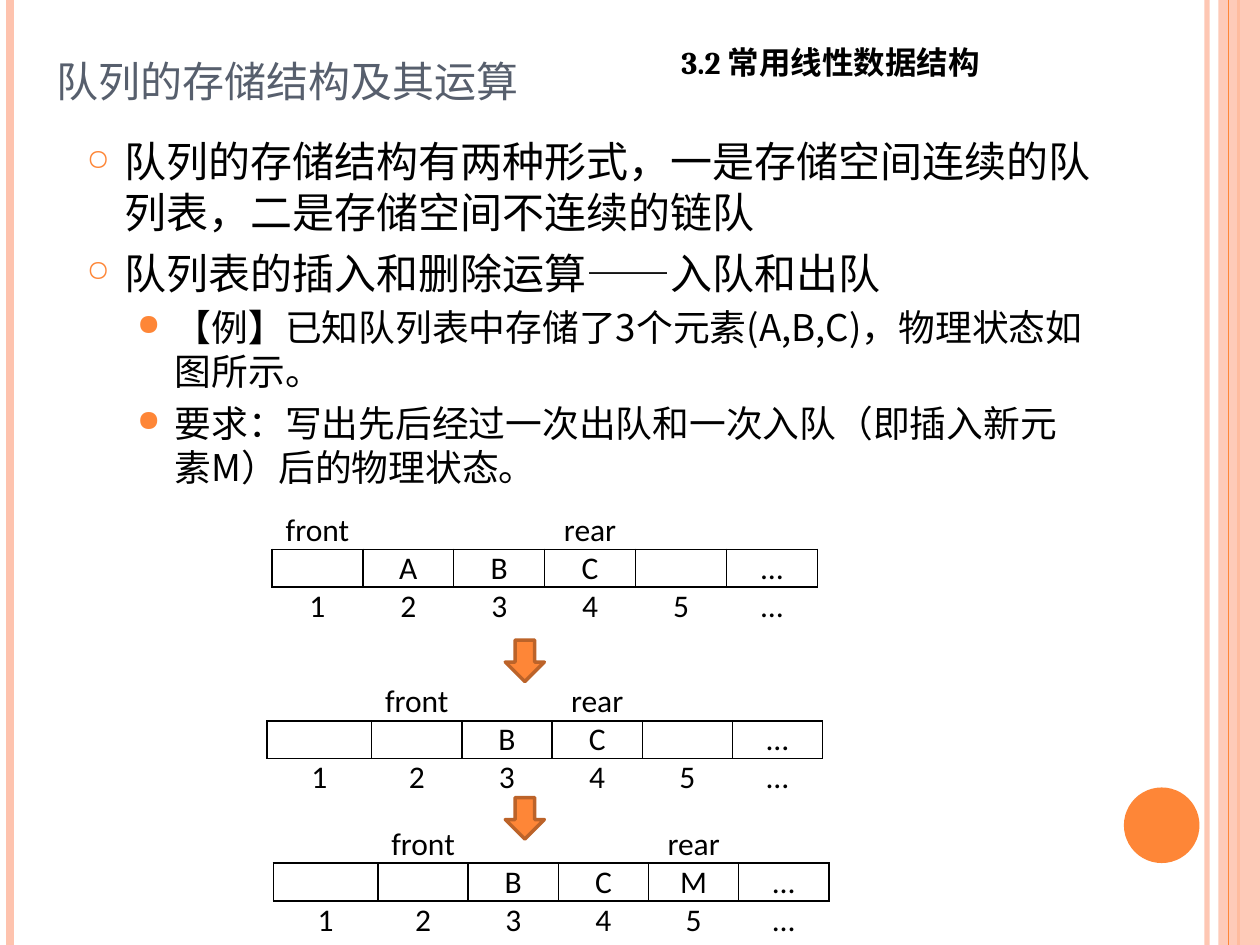
from lxml.etree import SubElement
from pptx import Presentation
from pptx.dml.color import RGBColor
from pptx.enum.shapes import MSO_CONNECTOR as CONNECTOR, MSO_SHAPE as SHAPE
from pptx.enum.text import MSO_ANCHOR as ANCHOR, MSO_AUTO_SIZE as AUTO_SIZE, PP_ALIGN as ALIGN
from pptx.oxml.ns import qn
from pptx.util import Inches, Pt

COLORS = {"orange": "FE8637", "peach": "FEC3AE", "rust": "BC6329",
          "slate": "575F6D", "black": "000000"}
CJK = "Noto Sans CJK SC"
BULLET_FONT = "OpenSymbol"
NO_TABLE_STYLE = "{2D5ABB26-0587-4C30-8999-92F81FD0307C}"

# Content
TITLE = "队列的存储结构及其运算"
SECTION = "3.2 常用线性数据结构"
BODY = [  # level, runs of (text, bold)
    (0, [("队列的存储结构有两种形式，一是存储空间连续的队列表，二是存储空间不连续的链队", False)]),
    (0, [("队列表的插入和删除运算——入队和出队", False)]),
    (1, [("【例", False), ("】", True),
         ("已知队列表中存储了3个元素(A,B,C)，物理状态如图所示。", False)]),
    (1, [("要求：写出先后经过一次出队和一次入队（即插入新元素M）后的物理状态。", False)]),
]
LEVELS = [
    {"size": 24, "indent": 0.3, "before": 6, "bullet": "○", "percent": 70},
    {"size": 21, "indent": 0.7, "before": 4.2, "bullet": "●", "percent": 80},
]
INDEXES = ["1", "2", "3", "4", "5", "…"]
QUEUES = [  # left, top, width, first column width, pointers, stored elements
    (2.16, 4.06, 4.33, 0.72, ["front", "", "", "rear", "", ""], ["", "A", "B", "C", "", "…"]),
    (2.12, 5.42, 4.41, 0.83, ["", "front", "", "rear", "", ""], ["", "", "B", "C", "", "…"]),
    (2.17, 6.55, 4.41, 0.83, ["", "front", "", "", "rear", ""], ["", "", "B", "C", "M", "…"]),
]
ROW = 0.3
ARROW_TOPS = [5.09, 6.34]
STRIPES = [  # x, colour, width, opacity
    (9.58, "peach", 3, 93), (0.08, "peach", 4.5, 100),
    (9.83, "orange", 1.5, 100), (9.75, "orange", 0.75, 100),
]


def rgb(name):
    return RGBColor.from_string(COLORS[name])


def set_opacity(element, percent):
    color = next(element.iter(qn("a:srgbClr")))
    SubElement(color, qn("a:alpha"), val=str(percent * 1000))


def add_span(para, text, name, size, color="black", bold=False):
    span = para.add_run()
    span.text = text
    for key, value in {"name": name, "size": Pt(size), "bold": bold}.items():
        setattr(span.font, key, value)
    span.font.color.rgb = rgb(color)
    SubElement(span.font._element, qn("a:ea"), typeface=CJK)
    return span


def add_box(page, *place):
    box = page.shapes.add_textbox(*map(Inches, place))
    box.text_frame.word_wrap = True
    return box.text_frame


def add_stripe(page, x, color, width, opacity):
    stripe = page.shapes.add_connector(
        CONNECTOR.STRAIGHT, Inches(x), 0, Inches(x), Inches(7.5))
    stripe.line.color.rgb = rgb(color)
    stripe.line.width = Pt(width)
    if opacity < 100:
        set_opacity(stripe.line._ln, opacity)
    SubElement(stripe._element.spPr, qn("a:effectLst"))


def add_solid(page, kind, place, color, outline=None):
    shape = page.shapes.add_shape(kind, *map(Inches, place))
    shape.shadow.inherit = False
    shape.fill.solid()
    shape.fill.fore_color.rgb = rgb(color)
    if outline:
        shape.line.color.rgb = rgb(outline)
        shape.line.width = Pt(2)
    else:
        shape.line.fill.background()
    return shape


def add_bullet(para, level):
    props = para._p.get_or_add_pPr()
    props.set("marL", str(Inches(level["indent"])))
    props.set("indent", str(Inches(-0.3)))
    color = SubElement(props, qn("a:buClr"))
    SubElement(color, qn("a:srgbClr"), val=COLORS["orange"])
    SubElement(props, qn("a:buSzPct"), val=str(level["percent"] * 1000))
    SubElement(props, qn("a:buFont"), typeface=BULLET_FONT)
    SubElement(props, qn("a:buChar"), char=level["bullet"])


def add_border(cell):
    props = cell._tc.get_or_add_tcPr()
    for position, side in enumerate(("a:lnL", "a:lnR", "a:lnT", "a:lnB")):
        line = props.makeelement(qn(side), {"w": str(Pt(1))})
        fill = SubElement(line, qn("a:solidFill"))
        SubElement(fill, qn("a:srgbClr"), val=COLORS["black"])
        props.insert(position, line)


def add_queue(page, left, top, width, first, pointers, elements):
    others = len(INDEXES) - 1
    widths = [first] + [(width - first) / others] * others
    rows = [pointers, elements, INDEXES]
    frame = page.shapes.add_table(
        len(rows), len(widths), Inches(left), Inches(top),
        Inches(width), Inches(ROW * len(rows)))
    table = frame.table
    table.first_row = table.horz_banding = False
    table._tbl.tblPr.find(qn("a:tableStyleId")).text = NO_TABLE_STYLE
    for column, size in zip(table.columns, widths):
        column.width = Inches(size)
    for r, texts in enumerate(rows):
        table.rows[r].height = Inches(ROW)
        for c, text in enumerate(texts):
            cell = table.cell(r, c)
            cell.fill.background()
            for side, margin in {"left": 0.07, "right": 0.07, "top": 0, "bottom": 0}.items():
                setattr(cell, f"margin_{side}", Inches(margin))
            para = cell.text_frame.paragraphs[0]
            para.alignment = ALIGN.CENTER
            if text:
                add_span(para, text, "Calibri", 18)
            if texts is elements:
                add_border(cell)


def main():
    deck = Presentation()
    deck.slide_width, deck.slide_height = Inches(10), Inches(7.5)
    page = deck.slides.add_slide(deck.slide_layouts[6])

    # Side decoration
    for stripe in STRIPES[:3]:
        add_stripe(page, *stripe)
    band = add_solid(page, SHAPE.RECTANGLE, (9.67, 0, 0.33, 7.5), "peach")
    set_opacity(band._element.spPr, 87)
    add_stripe(page, *STRIPES[3])
    add_solid(page, SHAPE.OVAL, (8.92, 6.25, 0.6, 0.6), "orange")

    # Title and section name
    title = add_box(page, 0.35, -0.34, 8.17, 1.25)
    title.vertical_anchor = ANCHOR.BOTTOM
    span = add_span(title.paragraphs[0], TITLE, CJK, 30, "slate")
    span.font._element.set("cap", "small")
    section = add_box(page, 5.31, 0.29, 4.17, 0.4)
    section.auto_size = AUTO_SIZE.SHAPE_TO_FIT_TEXT
    add_span(section.paragraphs[0], SECTION, "Cambria", 18, bold=True)

    # Bulleted text
    body = add_box(page, 0.59, 1.03, 8.17, 5.33)
    for number, (depth, spans) in enumerate(BODY):
        para = body.add_paragraph() if number else body.paragraphs[0]
        level = LEVELS[depth]
        para.level = depth
        para.space_before = Pt(level["before"])
        add_bullet(para, level)
        for text, bold in spans:
            add_span(para, text, CJK, level["size"], bold=bold)

    # Queue states and the steps between them
    for queue in QUEUES:
        add_queue(page, *queue)
    for top in ARROW_TOPS:
        arrow = add_solid(page, SHAPE.RIGHT_ARROW, (4, top, 0.33, 0.31), "orange", "rust")
        arrow.rotation = 90

    deck.save("out.pptx")


if __name__ == "__main__":
    main()
